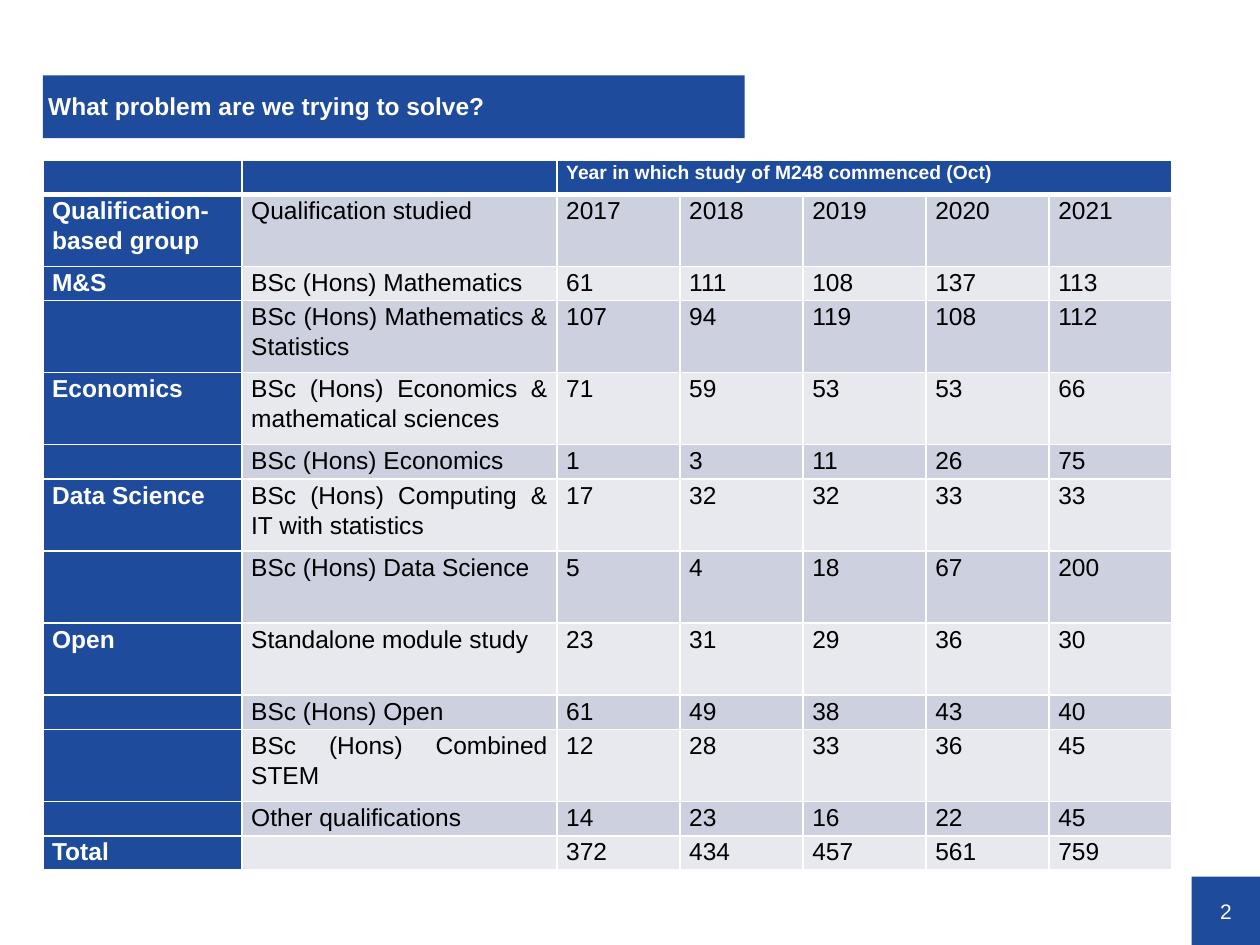
from lxml.etree import SubElement
from pptx import Presentation
from pptx.dml.color import RGBColor as RGB
from pptx.enum.shapes import MSO_SHAPE as SHAPE
from pptx.enum.text import MSO_ANCHOR as ANCHOR, MSO_AUTO_SIZE as AUTO, PP_ALIGN as ALIGN
from pptx.oxml.ns import qn
from pptx.util import Pt

TITLE = "What problem are we trying to solve?"
PAGE = "2"
HEADING = "Year in which study of M248 commenced (Oct)"
ROWS = [
    ("", "", HEADING),
    ("Qualification-based group", "Qualification studied", 2017, 2018, 2019, 2020, 2021),
    ("M&S", "BSc (Hons) Mathematics", 61, 111, 108, 137, 113),
    ("", "BSc (Hons) Mathematics & Statistics", 107, 94, 119, 108, 112),
    ("Economics", "BSc (Hons) Economics & mathematical sciences", 71, 59, 53, 53, 66),
    ("", "BSc (Hons) Economics", 1, 3, 11, 26, 75),
    ("Data Science", "BSc (Hons) Computing & IT with statistics", 17, 32, 32, 33, 33),
    ("", "BSc (Hons) Data Science", 5, 4, 18, 67, 200),
    ("Open", "Standalone module study", 23, 31, 29, 36, 30),
    ("", "BSc (Hons) Open", 61, 49, 38, 43, 40),
    ("", "BSc (Hons) Combined STEM", 12, 28, 33, 36, 45),
    ("", "Other qualifications", 14, 23, 16, 22, 45),
    ("Total", "", 372, 434, 457, 561, 759),
]
COLORS = {"blue": "1E4B9B", "white": "FFFFFF", "black": "000000",
          "dark": "CDD0DE", "light": "E8E9EF"}
FONT = "Arial"
LEFT = 24.5
COL_WIDTHS = [113.8, 180] + [70.3] * 5
SHORT, TALL = 19.6, 41.2
TALL_ROWS = {1, 3, 4, 6, 7, 8, 10}


def rgb(name):
    return RGB.from_string(COLORS[name])


def fill(obj, name):
    obj.fill.solid()
    obj.fill.fore_color.rgb = rgb(name)


def format_text(p, size, color, bold=False):
    for r in p.runs:
        r.font.name, r.font.size, r.font.bold = FONT, Pt(size), bold
        r.font.color.rgb = rgb(color)


def set_margins(obj, left, top, right, bottom):
    obj.margin_left, obj.margin_top = Pt(left), Pt(top)
    obj.margin_right, obj.margin_bottom = Pt(right), Pt(bottom)


def set_borders(cell, row):
    tc_pr = cell._tc.get_or_add_tcPr()
    widths = {"lnL": 1, "lnR": 1, "lnT": 3 if row == 1 else 1, "lnB": 3 if row == 0 else 1}
    for tag, width in widths.items():
        ln = SubElement(tc_pr, qn("a:" + tag), w=str(Pt(width)))
        SubElement(SubElement(ln, qn("a:solidFill")), qn("a:srgbClr"), val=COLORS["white"])


def add_title(s):
    sp = s.shapes.title
    sp.left, sp.top, sp.width, sp.height = Pt(LEFT), Pt(43), Pt(401), Pt(36)
    fill(sp, "blue")
    tf = sp.text_frame
    tf.text = TITLE
    tf.auto_size, tf.vertical_anchor = AUTO.NONE, ANCHOR.MIDDLE
    set_margins(tf, 3, 1.5, 0, 0)
    p = tf.paragraphs[0]
    p.alignment, p.line_spacing = ALIGN.LEFT, 0.9
    format_text(p, 14, "white", True)


def add_page_number(s):
    sp = s.shapes.add_shape(SHAPE.RECTANGLE, Pt(681), Pt(501), Pt(39), Pt(39))
    sp.shadow.inherit = False
    fill(sp, "blue")
    sp.line.fill.background()
    tf = sp.text_frame
    tf.text = PAGE
    tf.vertical_anchor = ANCHOR.MIDDLE
    set_margins(tf, 0, 0, 0, 0)
    tf.paragraphs[0].alignment = ALIGN.CENTER
    format_text(tf.paragraphs[0], 12, "white")


def add_study_table(s):
    heights = [TALL if i in TALL_ROWS else SHORT for i in range(len(ROWS))]
    table = s.shapes.add_table(len(ROWS), len(COL_WIDTHS), Pt(LEFT), Pt(91.4),
                               Pt(sum(COL_WIDTHS)), Pt(sum(heights))).table
    for column, width in zip(table.columns, COL_WIDTHS):
        column.width = Pt(width)
    for i, (row, height) in enumerate(zip(table.rows, heights)):
        row.height = Pt(height)
        for j, cell in enumerate(row.cells):
            header = i == 0 or j == 0
            size = 11 if i == 0 else 14
            set_borders(cell, i)
            fill(cell, "blue" if header else "dark" if i % 2 else "light")
            set_margins(cell, 5.3, 0, 5.3, 0)
            p = cell.text_frame.paragraphs[0]
            p.alignment, p.line_spacing, p.space_after = ALIGN.JUSTIFY, 1.1, Pt(12)
            text = str(ROWS[i][j]) if j < len(ROWS[i]) else ""
            if text:
                p.text = text
                format_text(p, size, "white" if header else "black", header)
            else:
                p._p.get_or_add_endParaRPr().set("sz", str(size * 100))
    table.cell(0, 2).merge(table.cell(0, len(COL_WIDTHS) - 1))


def main():
    prs = Presentation()
    prs.slide_width, prs.slide_height = Pt(720), Pt(540)
    s = prs.slides.add_slide(prs.slide_layouts[0])
    subtitle = s.placeholders[1].element
    subtitle.getparent().remove(subtitle)
    add_page_number(s)
    add_title(s)
    add_study_table(s)
    prs.save("out.pptx")


if __name__ == "__main__":
    main()
